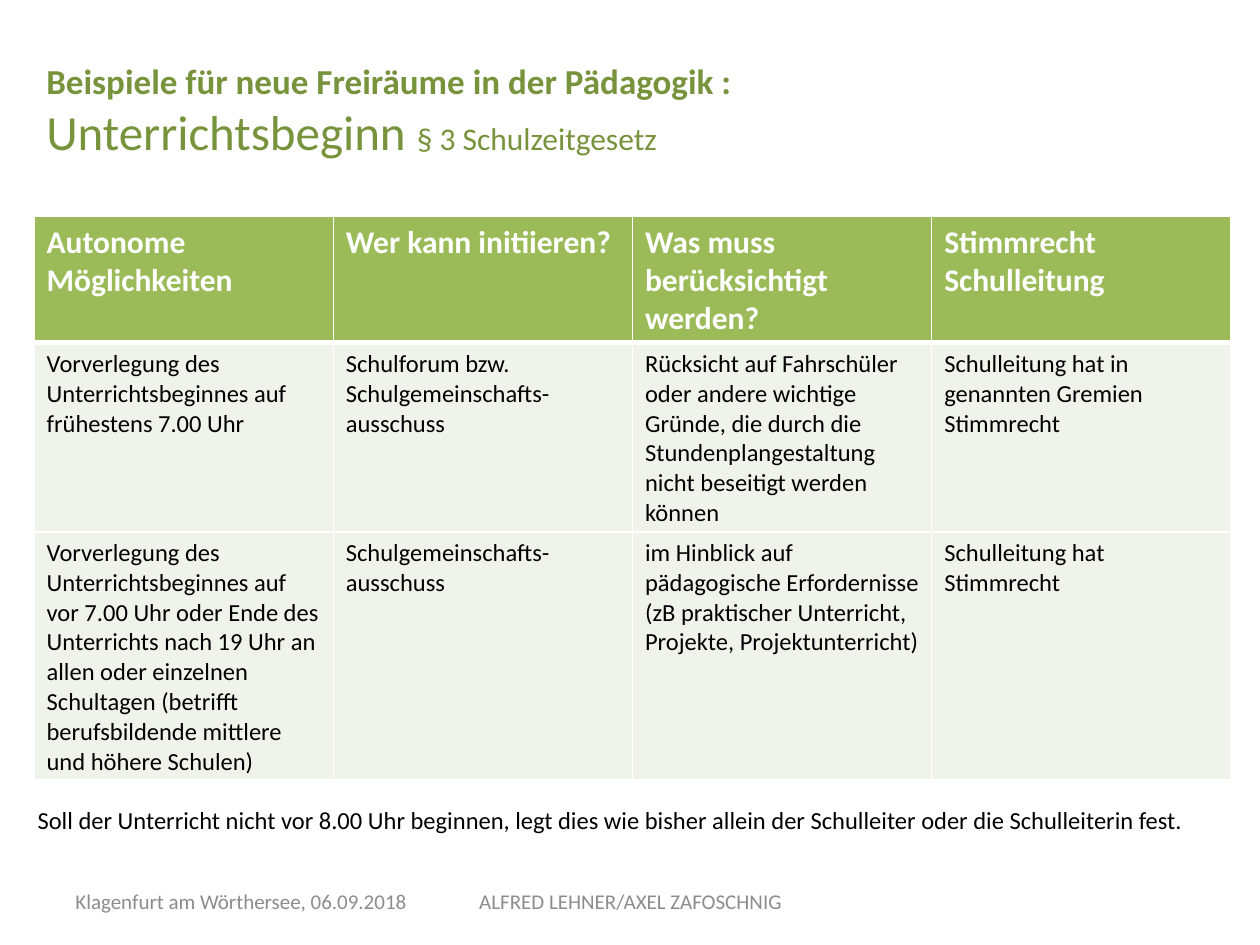
from dataclasses import dataclass

from lxml.etree import SubElement
from pptx import Presentation
from pptx.dml.color import RGBColor as RGB
from pptx.enum.text import MSO_ANCHOR as Anchor, PP_ALIGN as Align
from pptx.oxml.ns import qn
from pptx.util import Inches, Pt


@dataclass(frozen=True)
class Theme:
    font: str = "Calibri"
    heading: str = "77933C"
    header_fill: str = "9BBB59"
    body_fill: str = "EFF3EA"
    white: str = "FFFFFF"
    black: str = "000000"
    grey: str = "8C8C8C"
    topic_size: int = 28
    kicker_size: int = 20
    header_size: int = 18
    body_size: int = 14
    footer_size: int = 12
    thin_rule: int = 1
    thick_rule: int = 3


class SlideBuilder:
    def __init__(self, slide, theme):
        self.slide = slide
        self.theme = theme

    def run(self, paragraph, text, size, color, bold=False):
        run = paragraph.add_run()
        run.text = text
        run.font.name = self.theme.font
        run.font.size = Pt(size)
        run.font.bold = bold
        run.font.color.rgb = RGB.from_string(color)

    def text(self, box, lines, color, anchor=Anchor.TOP, align=Align.LEFT):
        """Each line is a list of (text, size, bold) runs."""
        frame = self.slide.shapes.add_textbox(*map(Inches, box)).text_frame
        frame.word_wrap = True
        frame.vertical_anchor = anchor
        paragraph = frame.paragraphs[0]
        paragraph.alignment = align
        for number, line in enumerate(lines):
            if number:
                paragraph.add_line_break()
            for text, size, bold in line:
                self.run(paragraph, text, size, color, bold)

    def borders(self, cell, widths):
        properties = cell._tc.get_or_add_tcPr()
        for side, width in zip("LRTB", widths):
            line = SubElement(properties, qn(f"a:ln{side}"), w=str(Pt(width)))
            fill = SubElement(line, qn("a:solidFill"))
            SubElement(fill, qn("a:srgbClr"), val=self.theme.white)

    def cell(self, cell, text, row):
        theme = self.theme
        thin, thick = theme.thin_rule, theme.thick_rule
        header = row == 0
        self.borders(cell, (thin, thin, thick if row == 1 else thin,
                            thick if header else thin))
        cell.fill.solid()
        cell.fill.fore_color.rgb = RGB.from_string(
            theme.header_fill if header else theme.body_fill)
        size = theme.header_size if header else theme.body_size
        color = theme.white if header else theme.black
        frame = cell.text_frame
        for number, line in enumerate(text.split("\n")):
            paragraph = frame.add_paragraph() if number else frame.paragraphs[0]
            self.run(paragraph, line, size, color, header)

    def table(self, box, rows, heights):
        table = self.slide.shapes.add_table(
            len(rows), len(rows[0]), *map(Inches, box)).table
        for row, (texts, height) in enumerate(zip(rows, heights)):
            table.rows[row].height = Inches(height)
            for column, text in enumerate(texts):
                self.cell(table.cell(row, column), text, row)


AUTONOMY_RULES = [
    ["Autonome Möglichkeiten", "Wer kann initiieren?",
     "Was muss berücksichtigt werden?", "Stimmrecht\nSchulleitung"],
    ["Vorverlegung des Unterrichtsbeginnes auf frühestens 7.00 Uhr",
     "Schulforum bzw. Schulgemeinschafts-ausschuss",
     "Rücksicht auf Fahrschüler oder andere wichtige Gründe, die durch die "
     "Stundenplangestaltung nicht beseitigt werden können",
     "Schulleitung hat in genannten Gremien Stimmrecht"],
    ["Vorverlegung des Unterrichtsbeginnes auf vor 7.00 Uhr oder Ende des "
     "Unterrichts nach 19 Uhr an allen oder einzelnen Schultagen (betrifft "
     "berufsbildende mittlere und höhere Schulen)",
     "Schulgemeinschafts-ausschuss",
     "im Hinblick auf pädagogische Erfordernisse (zB praktischer Unterricht, "
     "Projekte, Projektunterricht)",
     "Schulleitung hat Stimmrecht"],
]


def main():
    theme = Theme()
    deck = Presentation()
    deck.slide_width, deck.slide_height = Inches(10), Inches(7.5)
    builder = SlideBuilder(deck.slides.add_slide(deck.slide_layouts[6]), theme)

    # Title
    builder.text((0.27, 0.42, 8.96, 0.99), [
        [("Beispiele für neue Freiräume in der Pädagogik :", theme.kicker_size, True)],
        [("Unterrichtsbeginn ", theme.topic_size, False),
         ("§ 3 Schulzeitgesetz", theme.header_size, False)],
    ], theme.heading)

    # Table of autonomous options
    builder.table((0.27, 1.72, 9.5, 4.47), AUTONOMY_RULES, (1, 1.5, 1.97))

    # Closing remark
    builder.text((0.2, 6.34, 9.37, 0.34), [
        [("Soll der Unterricht nicht vor 8.00 Uhr beginnen, legt dies wie bisher "
          "allein der Schulleiter oder die Schulleiterin fest.",
          theme.body_size, False)],
    ], theme.black)

    # Footer: place and date, authors
    for left, width, text, align in (
        (0.5, 2.92, "Klagenfurt am Wörthersee, 06.09.2018", Align.LEFT),
        (3.42, 3.17, "ALFRED LEHNER/AXEL ZAFOSCHNIG", Align.CENTER),
    ):
        builder.text((left, 6.95, width, 0.4), [[(text, theme.footer_size, False)]],
                     theme.grey, Anchor.MIDDLE, align)

    deck.save("out.pptx")


if __name__ == "__main__":
    main()
